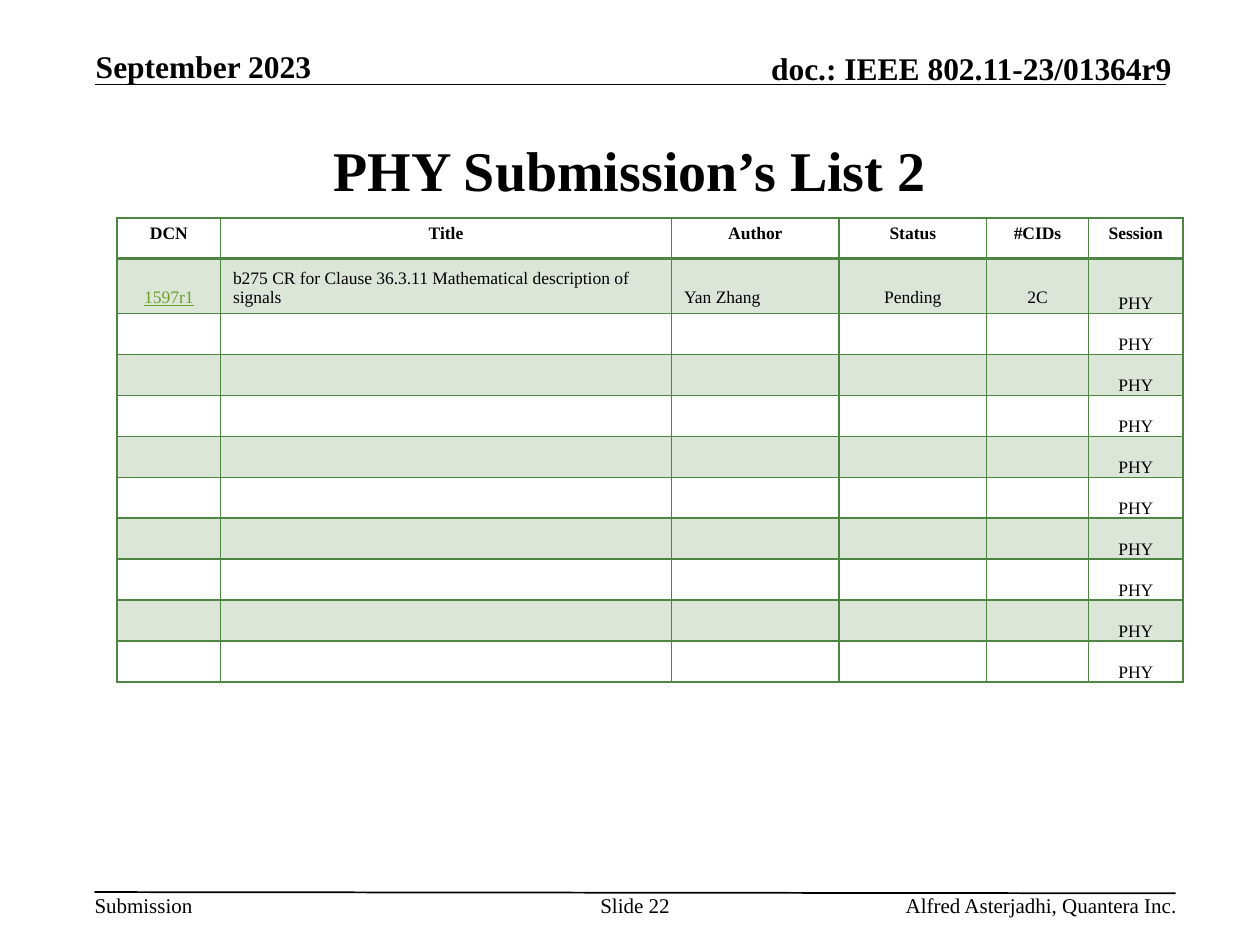
from dataclasses import dataclass

import pptx
import pptx.dml.color
import pptx.enum.shapes
import pptx.enum.text
import pptx.oxml.ns
import pptx.util

RGBColor = pptx.dml.color.RGBColor
Align = pptx.enum.text.PP_ALIGN
Anchor = pptx.enum.text.MSO_ANCHOR

BLACK = RGBColor(0x00, 0x00, 0x00)
GREEN = RGBColor(0x4E, 0x85, 0x42)
LINK = RGBColor(0x6B, 0x9F, 0x25)
FONT = "Times New Roman"
BAND_OPACITY = 20

# The slide is a grid of 100 columns by 75 rows.
GRID_COLS, GRID_ROWS = 100, 75
CELL = pptx.util.Inches(0.1)

COL_WIDTHS = [8.2, 35.8, 13.3, 11.7, 8.1, 7.5]
HEADERS = ["DCN", "Title", "Author", "Status", "#CIDs", "Session"]
SUBMISSION = [
    "1597r1",
    "b275 CR for Clause 36.3.11 Mathematical description of signals",
    "Yan Zhang", "Pending", "2C", "PHY",
]
EMPTY_ROW = [""] * 5 + ["PHY"]
ROWS = [HEADERS, SUBMISSION] + [EMPTY_ROW] * 9
LEFT_ALIGNED = {"Title", "Author"}
TABLE_HEIGHT, SUBMISSION_HEIGHT = 36.5, 4


@dataclass
class Box:
    left: float
    top: float
    width: float
    height: float

    def emu(self) -> list[int]:
        return [grid(v) for v in (self.left, self.top, self.width, self.height)]


@dataclass
class Label:
    text: str
    box: Box
    size: int
    align: Align = Align.LEFT
    anchor: Anchor = Anchor.TOP
    bold: bool = False


@dataclass
class Rule:
    x1: float
    y1: float
    x2: float
    y2: float


LABELS = [
    Label("Submission", Box(7.5, 70.8, 7.8, 2), 12),
    Label("doc.: IEEE 802.11-23/01364r9", Box(54.7, 3.9, 38.3, 3), 18,
          Align.RIGHT, Anchor.BOTTOM, True),
    Label("September 2023", Box(7.6, 3.7, 20.5, 3), 18,
          Align.LEFT, Anchor.BOTTOM, True),
    Label("Alfred Asterjadhi, Quantera Inc.", Box(58.6, 70.8, 34.8, 2), 12,
          Align.RIGHT),
    Label("Slide 22", Box(47.5, 70.8, 5.8, 4), 12, Align.CENTER),
]
RULES = [Rule(7.5, 6.7, 92.5, 6.7), Rule(7.5, 70.8, 93.3, 70.9)]


def grid(cells: float) -> int:
    return round(cells * CELL)


def style(p, size: int, align: Align, bold: bool = False,
          color: RGBColor = BLACK) -> None:
    p.alignment = align
    p.font.name = FONT
    p.font.size = pptx.util.Pt(size)
    p.font.bold = bold
    p.font.color.rgb = color


def add_label(s, label: Label) -> None:
    tf = s.shapes.add_textbox(*label.box.emu()).text_frame
    tf.margin_left = tf.margin_right = tf.margin_top = tf.margin_bottom = 0
    tf.word_wrap = True
    tf.vertical_anchor = label.anchor
    tf.text = label.text
    style(tf.paragraphs[0], label.size, label.align, label.bold)


def add_rule(s, rule: Rule) -> None:
    line = s.shapes.add_connector(
        pptx.enum.shapes.MSO_CONNECTOR.STRAIGHT,
        *(grid(v) for v in (rule.x1, rule.y1, rule.x2, rule.y2)))
    line.line.color.rgb = BLACK
    line.line.width = pptx.util.Pt(1)
    add_xml(line._element.spPr, "a:effectLst")


def add_xml(parent, tag: str, **attributes: str):
    element = parent.makeelement(pptx.oxml.ns.qn(tag), attributes)
    parent.append(element)
    return element


def add_border(cell, side: str, points: float) -> None:
    ln = add_xml(cell._tc.get_or_add_tcPr(), f"a:ln{side}",
                 w=str(pptx.util.Pt(points)))
    add_xml(add_xml(ln, "a:solidFill"), "a:srgbClr", val=str(GREEN))


def fill_cell(cell, row: int) -> None:
    """Tint the odd rows with translucent green."""
    if row % 2 == 0:
        cell.fill.background()
        return
    cell.fill.solid()
    cell.fill.fore_color.rgb = GREEN
    color = cell._tc.tcPr.find(pptx.oxml.ns.qn("a:solidFill"))[0]
    add_xml(color, "a:alpha", val=str(BAND_OPACITY * 1000))


def write_cell(cell, text: str, row: int, col: int) -> None:
    is_header = row == 0
    is_link = row == 1 and col == 0
    is_left = not is_header and HEADERS[col] in LEFT_ALIGNED
    cell.text = text
    p = cell.text_frame.paragraphs[0]
    style(p, 10, Align.LEFT if is_left else Align.CENTER, is_header,
          LINK if is_link else BLACK)
    if is_link:
        p.font.underline = True
    if not text:
        add_xml(p._p, "a:endParaRPr", sz="1000")
    if not is_header:
        cell.vertical_anchor = Anchor.BOTTOM
        if HEADERS[col] == "Session":
            cell.margin_left = cell.margin_right = 0
            cell.margin_top = cell.margin_bottom = 0


def add_submissions(s) -> None:
    box = Box(9.3, 17.3, sum(COL_WIDTHS), TABLE_HEIGHT)
    table = s.shapes.add_table(len(ROWS), len(HEADERS), *box.emu()).table
    table.first_row = table.horz_banding = False
    for column, width in zip(table.columns, COL_WIDTHS):
        column.width = grid(width)
    row_height = (TABLE_HEIGHT - SUBMISSION_HEIGHT) / (len(ROWS) - 1)
    for i, texts in enumerate(ROWS):
        table.rows[i].height = grid(SUBMISSION_HEIGHT if i == 1 else row_height)
        for j, text in enumerate(texts):
            cell = table.cell(i, j)
            write_cell(cell, text, i, j)
            for side in "LRTB":
                under_header = (i, side) in {(0, "B"), (1, "T")}
                add_border(cell, side, 2 if under_header else 1)
            fill_cell(cell, i)


def add_title(s) -> None:
    title = s.shapes.title
    title.left, title.top, title.width, title.height = Box(7.5, 7.6, 85, 11.6).emu()
    tf = title.text_frame
    tf.text = "PHY Submission’s List 2"
    tf.vertical_anchor = Anchor.MIDDLE
    style(tf.paragraphs[0], 32, Align.CENTER, True)


def main() -> None:
    prs = pptx.Presentation()
    prs.slide_width, prs.slide_height = grid(GRID_COLS), grid(GRID_ROWS)
    s = prs.slides.add_slide(prs.slide_layouts.get_by_name("Title Only"))
    for rule in RULES:
        add_rule(s, rule)
    for label in LABELS:
        add_label(s, label)
    add_title(s)
    add_submissions(s)
    prs.save("out.pptx")


if __name__ == "__main__":
    main()
